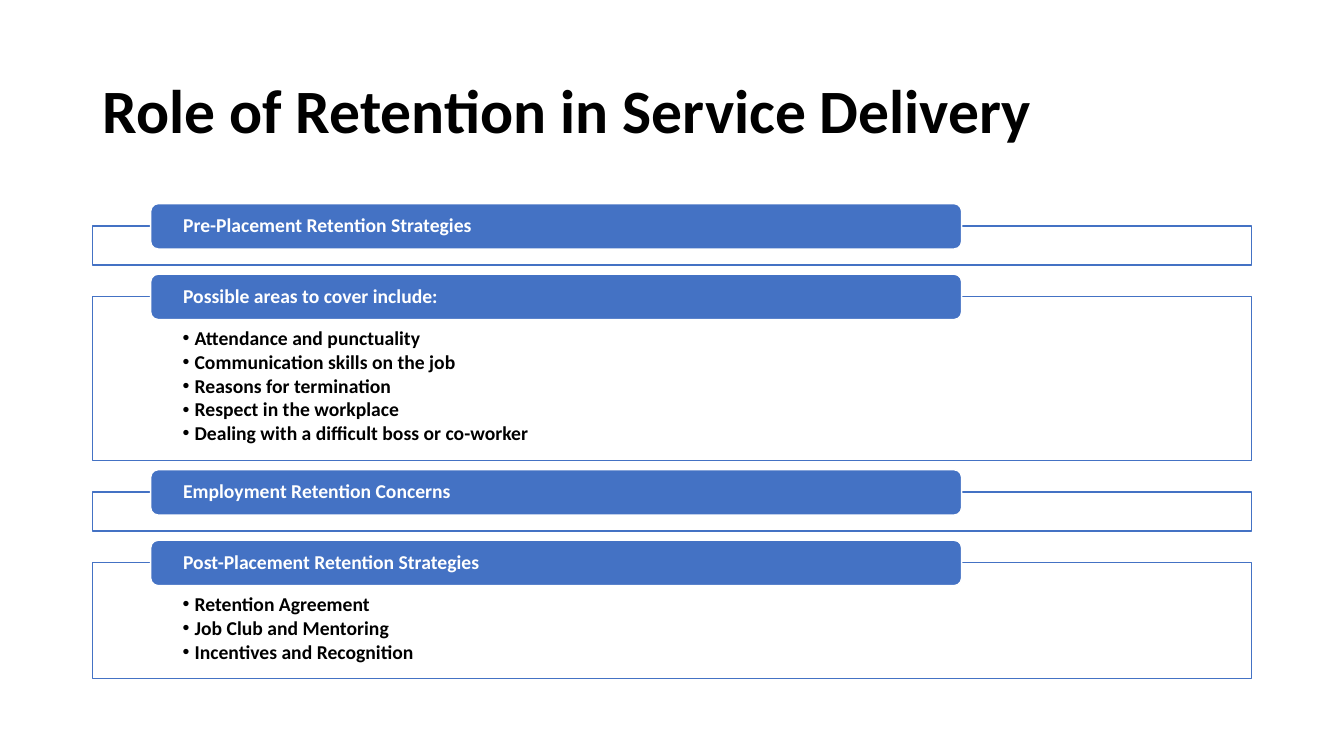
from dataclasses import dataclass

from lxml.etree import SubElement
from pptx import Presentation
from pptx.dml.color import RGBColor
from pptx.enum.shapes import MSO_SHAPE
from pptx.enum.text import MSO_ANCHOR, PP_ALIGN
from pptx.oxml.ns import qn
from pptx.util import Inches, Pt


@dataclass(frozen=True)
class Theme:
    font: str = "Calibri"
    accent: RGBColor = RGBColor(0x44, 0x72, 0xC4)
    light: RGBColor = RGBColor(0xFF, 0xFF, 0xFF)
    dark: RGBColor = RGBColor(0, 0, 0)
    title_size: int = 44
    body_size: int = 14
    line_width: int = 1


@dataclass(frozen=True)
class Box:
    left: float
    top: float
    width: float
    height: float

    def lengths(self):
        return [Inches(n) for n in (self.left, self.top, self.width, self.height)]


THEME = Theme()
SLIDE_WIDTH, SLIDE_HEIGHT = 13.33, 7.5
MARGIN = 0.92
CONTENT_WIDTH = SLIDE_WIDTH - 2 * MARGIN

# Section list: panel heights follow from the number of bullets
SECTION_GAP = 0.31
EMPTY_PANEL = 0.39
BULLET_PANEL = 0.43
BULLET_LINE = 0.24
HEADING_HEIGHT = 0.45
HEADING_RISE = 0.22
HEADING_INDENT, HEADING_SHARE = 0.05, 0.7  # shares of the panel width

SECTIONS = [
    ("Pre-Placement Retention Strategies", []),
    ("Possible areas to cover include:", [
        "Attendance and punctuality",
        "Communication skills on the job",
        "Reasons for termination",
        "Respect in the workplace",
        "Dealing with a difficult boss or co-worker",
    ]),
    ("Employment Retention Concerns", []),
    ("Post-Placement Retention Strategies", [
        "Retention Agreement",
        "Job Club and Mentoring",
        "Incentives and Recognition",
    ]),
]


def write(shape, lines, size, color, anchor, insets):
    frame = shape.text_frame
    frame.word_wrap = True
    frame.vertical_anchor = anchor
    (frame.margin_left, frame.margin_top,
     frame.margin_right, frame.margin_bottom) = [Inches(n) for n in insets]
    frame.text = "\n".join(lines)
    for para in frame.paragraphs:
        para.alignment = PP_ALIGN.LEFT
        para.line_spacing = 0.9
        for span in para.runs:
            span.font.name = THEME.font
            span.font.size = Pt(size)
            span.font.bold = True
            span.font.color.rgb = color


def add_bullet(para):
    para.space_after = Pt(1.8)
    properties = para._p.get_or_add_pPr()
    properties.set("marL", str(Inches(0.12)))
    properties.set("indent", str(-Inches(0.12)))
    SubElement(properties, qn("a:buFont")).set("typeface", "Arial")
    SubElement(properties, qn("a:buChar")).set("char", "•")


def add_block(page, kind, box, fill, line):
    block = page.shapes.add_shape(kind, *box.lengths())
    block.shadow.inherit = False
    block.fill.solid()
    block.fill.fore_color.rgb = fill
    block.line.color.rgb = line
    block.line.width = Pt(THEME.line_width)
    return block


def add_title(page, box, text):
    title = page.shapes.add_textbox(*box.lengths())
    write(title, [text], THEME.title_size, THEME.dark, MSO_ANCHOR.MIDDLE,
          (0.1, 0.05, 0.1, 0.05))


def add_section(page, box, heading, bullets):
    # Outlined panel with its bullets
    panel = add_block(page, MSO_SHAPE.RECTANGLE, box, THEME.light, THEME.accent)
    if bullets:
        write(panel, bullets, THEME.body_size, THEME.dark, MSO_ANCHOR.TOP,
              (0.89, 0.32, 0.89, 0.11))
        for para in panel.text_frame.paragraphs:
            add_bullet(para)

    # Heading tab across the panel's top edge
    tab_box = Box(box.left + HEADING_INDENT * box.width, box.top - HEADING_RISE,
                  HEADING_SHARE * box.width, HEADING_HEIGHT)
    tab = add_block(page, MSO_SHAPE.ROUNDED_RECTANGLE, tab_box,
                    THEME.accent, THEME.light)
    write(tab, [heading], THEME.body_size, THEME.light, MSO_ANCHOR.MIDDLE,
          (0.3, 0, 0.3, 0))


def add_section_list(page, left, top, width):
    for heading, bullets in SECTIONS:
        height = BULLET_PANEL + BULLET_LINE * len(bullets) if bullets else EMPTY_PANEL
        add_section(page, Box(left, top, width, height), heading, bullets)
        top += height + SECTION_GAP


def main():
    deck = Presentation()
    deck.slide_width, deck.slide_height = Inches(SLIDE_WIDTH), Inches(SLIDE_HEIGHT)
    page = deck.slides.add_slide(deck.slide_layouts[6])
    add_title(page, Box(MARGIN, 0.4, CONTENT_WIDTH, 1.45),
              "Role of Retention in Service Delivery")
    add_section_list(page, MARGIN, 2.24, CONTENT_WIDTH)
    deck.save("out.pptx")


if __name__ == "__main__":
    main()
